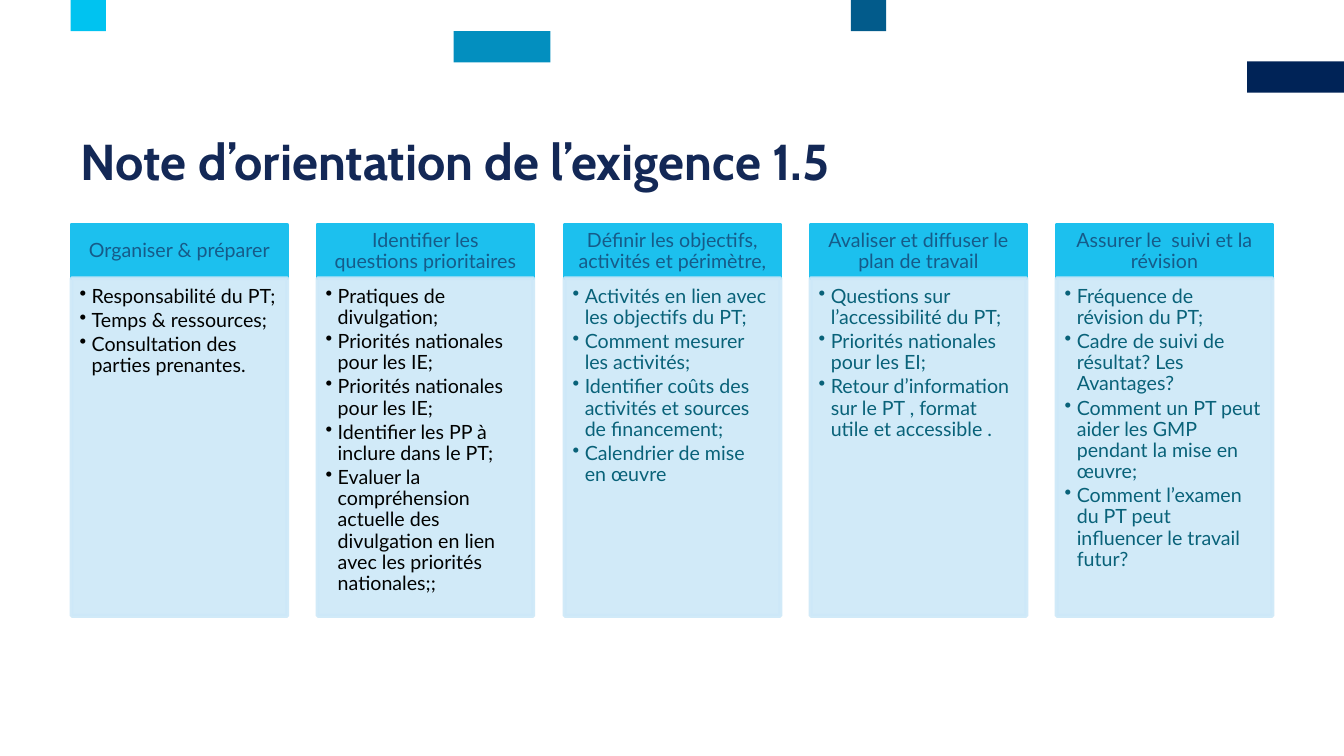
import dataclasses

import lxml.etree
import pptx
import pptx.dml.color
import pptx.enum.shapes
import pptx.enum.text
import pptx.oxml.ns
import pptx.util

PX = 9144  # EMU per px, 100 px to the inch
TITLE_ONLY = 5
ALIGN = pptx.enum.text.PP_ALIGN
ANCHOR = pptx.enum.text.MSO_ANCHOR


@dataclasses.dataclass(frozen=True)
class Theme:
    title_font: str = "Cabin"
    text_font: str = "Lato"
    title_size: int = 36
    text_size: int = 14
    page: str = "FFFFFF"
    title: str = "132856"
    header: str = "1CC0EE"
    header_text: str = "165B89"
    card: str = "CDE8F8"
    black: str = "000100"
    teal: str = "096279"
    navy: str = "002357"
    blue: str = "025B8B"
    mid_blue: str = "038FBF"
    cyan: str = "00C3F0"


def rgb(value):
    return pptx.dml.color.RGBColor.from_string(value)


def add_child(parent, tag, **attributes):
    return lxml.etree.SubElement(parent, pptx.oxml.ns.qn(tag), **attributes)


class SlideBuilder:
    def __init__(self, page, theme):
        self.page = page
        self.theme = theme
        page.background.fill.solid()
        page.background.fill.fore_color.rgb = rgb(theme.page)

    def rectangle(self, left, top, width, height, color, line_width=0, opacity=100):
        box = self.page.shapes.add_shape(
            pptx.enum.shapes.MSO_SHAPE.RECTANGLE,
            left * PX, top * PX, width * PX, height * PX)
        box.shadow.inherit = False
        box.fill.solid()
        box.fill.fore_color.rgb = rgb(color)
        if line_width:
            box.line.color.rgb = rgb(color)
            box.line.width = pptx.util.Pt(line_width)
        else:
            box.line.fill.background()
        if opacity < 100:
            for tone in box.element.spPr.iter(pptx.oxml.ns.qn("a:srgbClr")):
                add_child(tone, "a:alpha", val=str(opacity * 1000))
        return box

    def frame(self, box, insets, anchor):
        frame = box.text_frame
        frame.word_wrap = True
        frame.auto_size = pptx.enum.text.MSO_AUTO_SIZE.NONE
        frame.vertical_anchor = anchor
        (frame.margin_left, frame.margin_top,
         frame.margin_right, frame.margin_bottom) = [inset * PX for inset in insets]
        return frame

    def style(self, para, font, size, color, align, spacing=0.9, after=0, bold=False):
        para.alignment = align
        para.line_spacing = spacing
        para.space_before = pptx.util.Pt(0)
        para.space_after = pptx.util.Pt(after)
        para.font.name = font
        para.font.size = pptx.util.Pt(size)
        para.font.bold = bold
        para.font.color.rgb = rgb(color)

    def title(self, text, left, top, width, height):
        box = self.page.shapes.title
        box.left, box.top, box.width, box.height = (
            left * PX, top * PX, width * PX, height * PX)
        frame = self.frame(box, (10, 5, 10, 5), ANCHOR.TOP)
        frame.text = text
        self.style(frame.paragraphs[0], self.theme.title_font, self.theme.title_size,
                   self.theme.title, ALIGN.LEFT, spacing=0.89, bold=True)

    def header(self, text, left, top, width, height):
        box = self.rectangle(left, top, width, height, self.theme.header, 2.75)
        frame = self.frame(box, (11, 6, 11, 6), ANCHOR.MIDDLE)
        frame.text = text
        self.style(frame.paragraphs[0], self.theme.text_font, self.theme.text_size,
                   self.theme.header_text, ALIGN.CENTER, after=4.9)

    def bullet_card(self, items, color, left, top, width, height):
        box = self.rectangle(left, top, width, height, self.theme.card, 2.75, 90)
        frame = self.frame(box, (8, 8, 11, 12), ANCHOR.TOP)
        frame.text = "\n".join(items)
        for para in frame.paragraphs:
            para.level = 1
            self.style(para, self.theme.text_font, self.theme.text_size,
                       color, ALIGN.LEFT, after=2.1)
            properties = para._p.get_or_add_pPr()
            properties.set("marL", str(12 * PX))
            properties.set("indent", str(-12 * PX))
            bullet = add_child(properties, "a:buChar", char="•")
            properties.find(pptx.oxml.ns.qn("a:defRPr")).addprevious(bullet)


def main():
    theme = Theme()
    deck = pptx.Presentation()
    deck.slide_width, deck.slide_height = pptx.util.Inches(13.33), pptx.util.Inches(7.5)
    slide = SlideBuilder(deck.slides.add_slide(deck.slide_layouts[TITLE_ONLY]), theme)

    # Decorative blocks along the top
    for left, top, width, color in [
        (1237, 61, 96, theme.navy),
        (844, 0, 35, theme.blue),
        (450, 31, 96, theme.mid_blue),
        (70, 0, 35, theme.cyan),
    ]:
        slide.rectangle(left, top, width, 31, color)

    slide.title("Note d’orientation de l’exigence 1.5", 70, 131, 1193, 73)

    # Five steps: heading, text colour, bullets
    steps = [
        ("Organiser & préparer", theme.black, [
            "Responsabilité du PT;",
            "Temps & ressources;",
            "Consultation des parties prenantes."]),
        ("Identifier les questions prioritaires", theme.black, [
            "Pratiques de divulgation;",
            "Priorités nationales pour les IE;",
            "Priorités nationales pour les IE;",
            "Identifier les PP à inclure dans le PT;",
            "Evaluer la compréhension actuelle des divulgation en lien "
            "avec les priorités nationales;;"]),
        ("Définir les objectifs, activités et périmètre,", theme.teal, [
            "Activités en lien avec les objectifs du PT;",
            "Comment mesurer les activités;",
            "Identifier coûts des activités et sources de financement;",
            "Calendrier de mise en œuvre"]),
        ("Avaliser et diffuser le plan de travail", theme.teal, [
            "Questions sur l’accessibilité du PT;",
            "Priorités nationales pour les EI;",
            "Retour d’information sur le PT , format utile et accessible ."]),
        ("Assurer le  suivi et la révision", theme.teal, [
            "Fréquence de révision du PT;",
            "Cadre de suivi de résultat? Les Avantages?",
            "Comment un PT peut aider les GMP pendant la mise en œuvre;",
            "Comment l’examen du PT peut influencer le travail futur?"]),
    ]
    first_left, last_left, width = 71, 1048, 214
    step_pitch = (last_left - first_left) / (len(steps) - 1)
    for index, (heading, color, items) in enumerate(steps):
        left = round(first_left + index * step_pitch)
        slide.header(heading, left, 223, width, 53)
        slide.bullet_card(items, color, left, 276, width, 335)

    deck.save("out.pptx")


if __name__ == "__main__":
    main()
